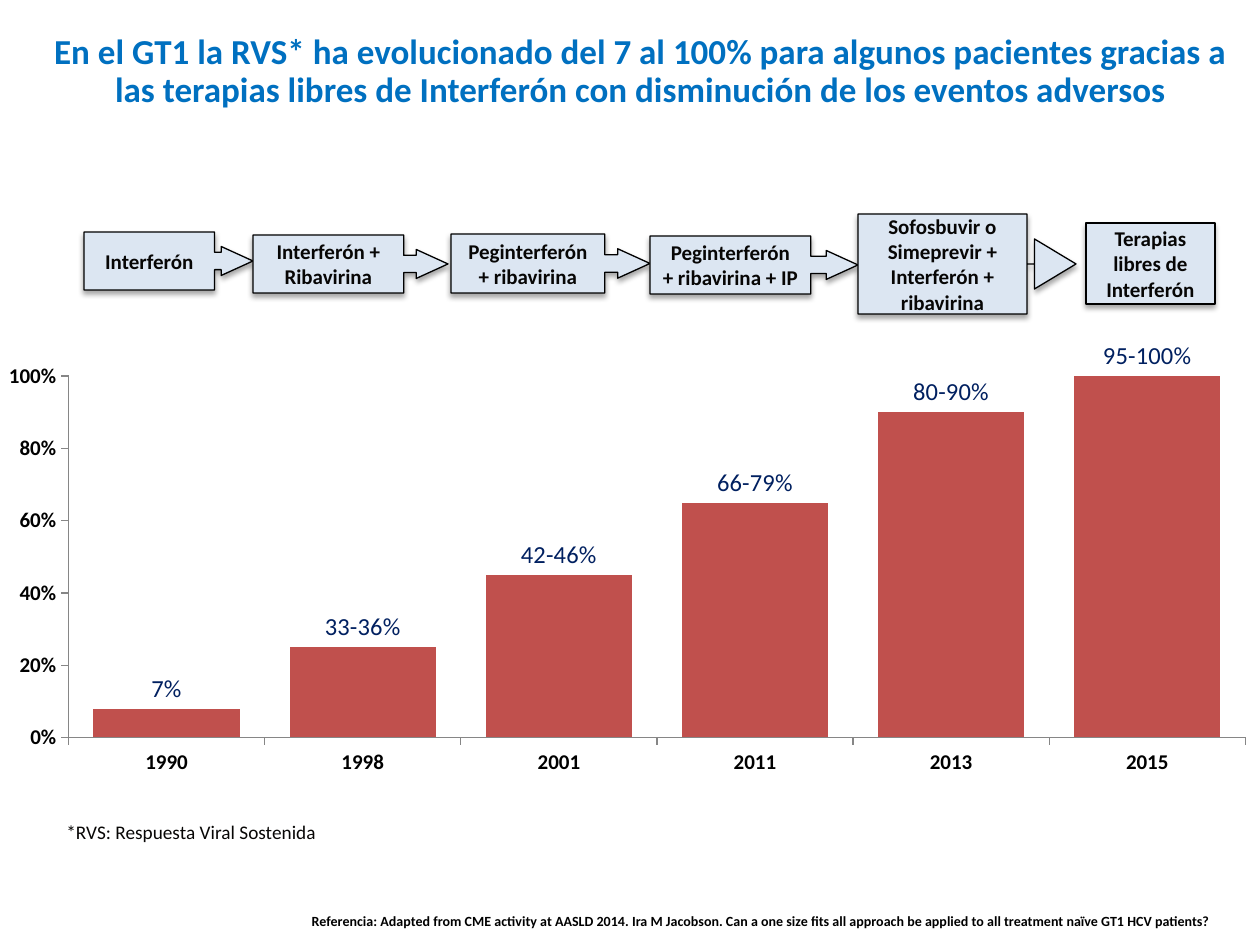
from lxml import etree
from pptx import Presentation, util as u
from pptx.chart.data import CategoryChartData
from pptx.dml.color import RGBColor
from pptx.enum import chart as ch, shapes, text
from pptx.oxml import parse_xml
from pptx.oxml.ns import nsdecls, qn

FONT = "Calibri"
BLUE = RGBColor(0x00, 0x70, 0xC0)
NAVY = RGBColor(0x00, 0x20, 0x60)
RED = RGBColor(0xC0, 0x50, 0x4D)
PALE = RGBColor(0xDC, 0xE6, 0xF2)
INK = RGBColor(0x07, 0x06, 0x05)
BLACK = RGBColor(0, 0, 0)
GRAY = RGBColor(0x86, 0x86, 0x86)

# Content
TITLE = ("En el GT1 la RVS* ha evolucionado del 7 al 100% para algunos pacientes gracias a "
         "las terapias libres de Interferón con disminución de los eventos adversos")
NOTE = "*RVS: Respuesta Viral Sostenida"
REFERENCE = ("Referencia: Adapted from CME activity at AASLD 2014. Ira M Jacobson. Can a one size "
             "fits all approach be applied to all treatment naïve GT1 HCV patients?")
RESPONSES = [  # year, share, label
    ("1990", 0.08, "7%"), ("1998", 0.25, "33-36%"), ("2001", 0.45, "42-46%"),
    ("2011", 0.65, "66-79%"), ("2013", 0.9, "80-90%"), ("2015", 1, "95-100%"),
]
CALLOUT = shapes.MSO_SHAPE.RIGHT_ARROW_CALLOUT
SLIM = (0.298, 0.25, 0.548, 0.773)
WIDE = (0, 0.25, 0.415, 0.775)
THERAPIES = [  # text, box in px, preset shape, adjustments
    ("Interferón", (84, 232, 169, 58), CALLOUT, SLIM),
    ("Interferón +\nRibavirina", (253, 235, 195, 58), CALLOUT, SLIM),
    ("Peginterferón\n+ ribavirina", (451, 234, 199, 59), CALLOUT, SLIM),
    ("Peginterferón\n+ ribavirina + IP", (650, 236, 208, 58), CALLOUT, SLIM),
    ("Sofosbuvir o Simeprevir + Interferón + ribavirina", (858, 214, 218, 100), CALLOUT, WIDE),
    ("Terapias libres de Interferón", (1086, 223, 129, 81), shapes.MSO_SHAPE.RECTANGLE, ()),
]
PLOT_AREA = {"x": 0.052, "y": 0.284, "w": 0.948, "h": 0.633}


def px(*lengths):
    return [u.Emu(round(length * 914400 / 126)) for length in lengths]


def style_font(font, size, color, bold):
    font.name, font.size, font.bold = FONT, u.Pt(size), bold
    font.color.rgb = color


def write(frame, words, size, color, bold=True, align=text.PP_ALIGN.CENTER,
          anchor=text.MSO_ANCHOR.TOP, wrap=True, spacing=None):
    frame.text = words
    frame.word_wrap = wrap
    frame.vertical_anchor = anchor
    for paragraph in frame.paragraphs:
        paragraph.alignment = align
        paragraph.line_spacing = spacing
        for run in paragraph.runs:
            style_font(run.font, size, color, bold)


def add_text(slide, box, words, size, color, **options):
    write(slide.shapes.add_textbox(*px(*box)).text_frame, words, size, color, **options)


def add_shadow(shape):
    shape.shadow.inherit = False
    effects = shape._element.spPr.find(qn("a:effectLst"))
    effects.append(parse_xml(
        f'<a:outerShdw {nsdecls("a")} blurRad="39370" dist="22860" dir="5400000" '
        'rotWithShape="0"><a:srgbClr val="000000"><a:alpha val="35000"/></a:srgbClr>'
        '</a:outerShdw>'))


def add_therapy(slide, words, box, preset, adjustments):
    shape = slide.shapes.add_shape(preset, *px(*box))
    for index, value in enumerate(adjustments):
        shape.adjustments[index] = value
    shape.fill.solid()
    shape.fill.fore_color.rgb = PALE
    shape.line.color.rgb = BLACK
    shape.line.width = u.Pt(0.75)
    add_shadow(shape)
    write(shape.text_frame, words, 12, INK, anchor=text.MSO_ANCHOR.MIDDLE)


def place_plot(chart):
    area = chart._chartSpace.chart.plotArea
    for old in area.findall(qn("c:layout")):
        area.remove(old)
    layout = etree.Element(qn("c:layout"))
    manual = etree.SubElement(layout, qn("c:manualLayout"))
    settings = {"layoutTarget": "inner", "xMode": "edge", "yMode": "edge", **PLOT_AREA}
    for name, value in settings.items():
        etree.SubElement(manual, qn(f"c:{name}")).set("val", str(value))
    area.insert(0, layout)


def add_response_chart(slide):
    data = CategoryChartData(number_format="0%")
    data.categories = [year for year, _, _ in RESPONSES]
    data.add_series("Series 1", [share for _, share, _ in RESPONSES])
    chart = slide.shapes.add_chart(
        ch.XL_CHART_TYPE.COLUMN_CLUSTERED, *px(4, 214, 1242, 571), data).chart
    chart.has_legend = chart.has_title = False
    style_font(chart.font, 10, BLACK, False)

    # Axes
    for axis in (chart.category_axis, chart.value_axis):
        axis.has_major_gridlines = False
        axis.major_tick_mark = ch.XL_TICK_MARK.OUTSIDE
        axis.minor_tick_mark = ch.XL_TICK_MARK.NONE
        axis.format.line.color.rgb = GRAY
        style_font(axis.tick_labels.font, 12, BLACK, True)
    scale = chart.value_axis
    scale.minimum_scale, scale.maximum_scale, scale.major_unit = 0, 1, 0.2
    scale.tick_labels.number_format = "0%"
    scale.tick_labels.number_format_is_linked = False

    # Columns and their labels
    plot = chart.plots[0]
    plot.gap_width = 34
    plot.vary_by_categories = False
    series = plot.series[0]
    series.format.fill.solid()
    series.format.fill.fore_color.rgb = RED
    for index, (_, _, label) in enumerate(RESPONSES):
        data_label = series.points[index].data_label
        data_label.text_frame.text = label
        style_font(data_label.text_frame.paragraphs[0].runs[0].font, 14, NAVY, False)
        data_label.position = ch.XL_LABEL_POSITION.OUTSIDE_END
    place_plot(chart)


def main():
    presentation = Presentation()
    presentation.slide_width, presentation.slide_height = px(1260, 945)
    slide = presentation.slides.add_slide(presentation.slide_layouts[6])

    add_response_chart(slide)
    add_text(slide, (35, -4, 1211, 120), TITLE, 20, BLUE,
             anchor=text.MSO_ANCHOR.BOTTOM, spacing=0.9)
    for therapy in THERAPIES:
        add_therapy(slide, *therapy)
    add_text(slide, (292, 906, 939, 30), REFERENCE, 8, BLACK)
    add_text(slide, (54, 814, 278, 36), NOTE, 11, INK, bold=False,
             align=text.PP_ALIGN.LEFT, wrap=False)

    presentation.save("out.pptx")


if __name__ == "__main__":
    main()
